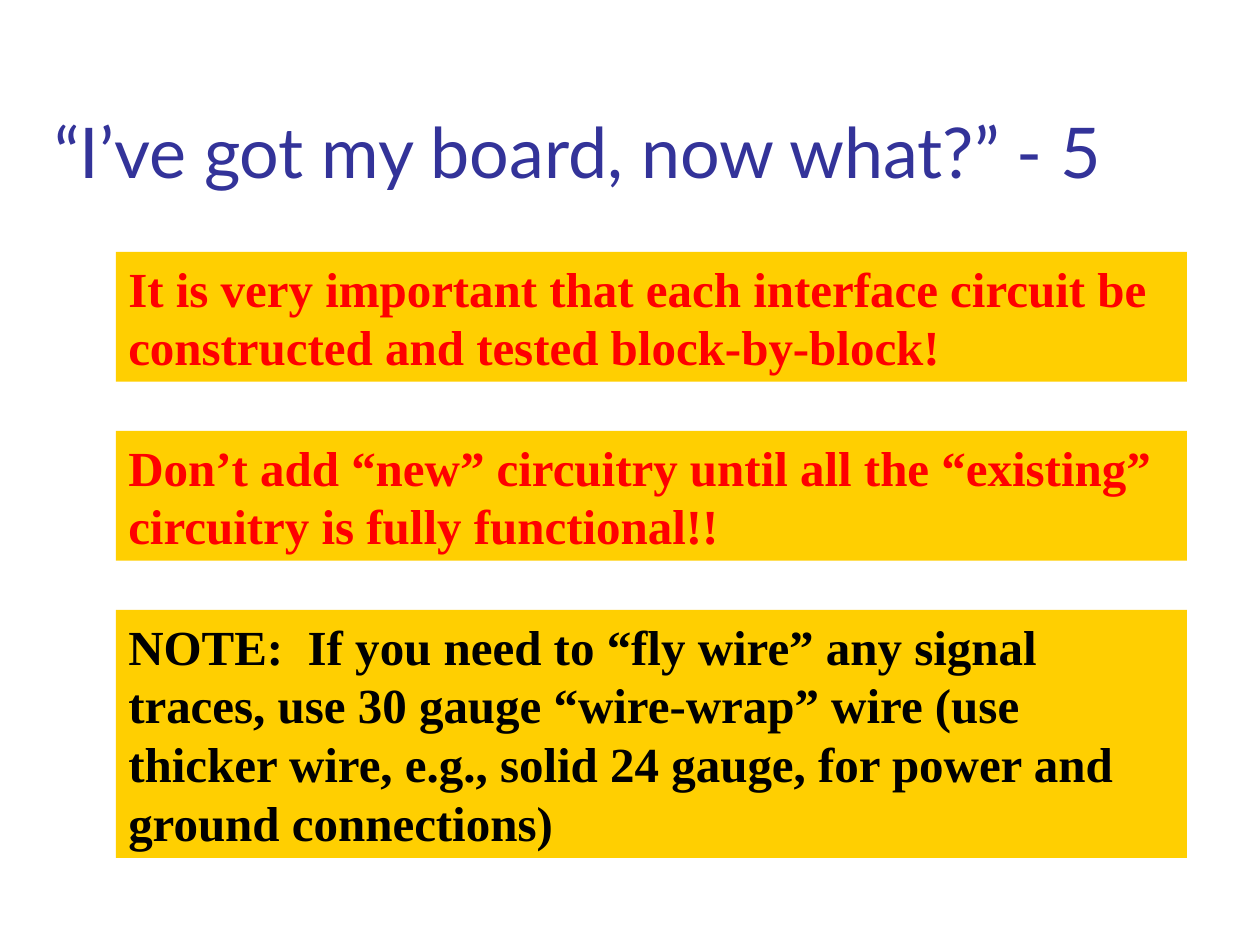
from pptx import Presentation
from pptx import util as u
from pptx.dml import color
from pptx.enum import shapes, text

COLORS = {"title": "333399", "panel": "FFCF01", "warning": "FF0000", "note": "000000"}
WIDTH, HEIGHT = u.Inches(10), u.Inches(7.5)
PANEL_LEFT, PANEL_TOP, PANEL_WIDTH = 0.92, 2, 8.5
ROW_STEP, LINE_HEIGHT, PADDING = 1.42, 0.47, 0.09
TITLE = "“I’ve got my board, now what?” - 5"
PANELS = [
    ("It is very important that each interface circuit be constructed and tested "
     "block-by-block!", "warning", 2),
    ("Don’t add “new” circuitry until all the “existing” circuitry is fully "
     "functional!!", "warning", 2),
    ("NOTE:  If you need to “fly wire” any signal traces, use 30 gauge “wire-wrap” "
     "wire (use thicker wire, e.g., solid 24 gauge, for power and ground connections)",
     "note", 4),
]


def rgb(name):
    return color.RGBColor.from_string(COLORS[name])


def write(shape, words, font, size, color_name, anchor, bold):
    frame = shape.text_frame
    frame.text = words
    frame.word_wrap = True
    frame.auto_size = text.MSO_AUTO_SIZE.NONE
    frame.vertical_anchor = anchor
    para = frame.paragraphs[0]
    para.alignment = text.PP_ALIGN.LEFT
    span = para.runs[0]
    span.font.name = font
    span.font.size = u.Pt(size)
    span.font.bold = bold
    span.font.color.rgb = rgb(color_name)


def add_title(page):
    title = page.shapes.title
    title.left, title.top = u.Inches(0.33), u.Inches(0.33)
    title.width, title.height = u.Inches(9.42), u.Inches(1.25)
    write(title, TITLE, "Lato", 40, "title", text.MSO_ANCHOR.BOTTOM, False)


def add_panel(page, row, words, color_name, lines):
    box = page.shapes.add_shape(
        shapes.MSO_SHAPE.RECTANGLE,
        u.Inches(PANEL_LEFT), u.Inches(PANEL_TOP + row * ROW_STEP),
        u.Inches(PANEL_WIDTH), u.Inches(lines * LINE_HEIGHT + PADDING))
    box.shadow.inherit = False
    box.fill.solid()
    box.fill.fore_color.rgb = rgb("panel")
    box.line.fill.background()
    write(box, words, "Times New Roman", 28, color_name, text.MSO_ANCHOR.TOP, True)


def main():
    deck = Presentation()
    deck.slide_width, deck.slide_height = WIDTH, HEIGHT
    page = deck.slides.add_slide(deck.slide_layouts[5])
    add_title(page)
    for row, (words, color_name, lines) in enumerate(PANELS):
        add_panel(page, row, words, color_name, lines)
    deck.save("out.pptx")


if __name__ == "__main__":
    main()
